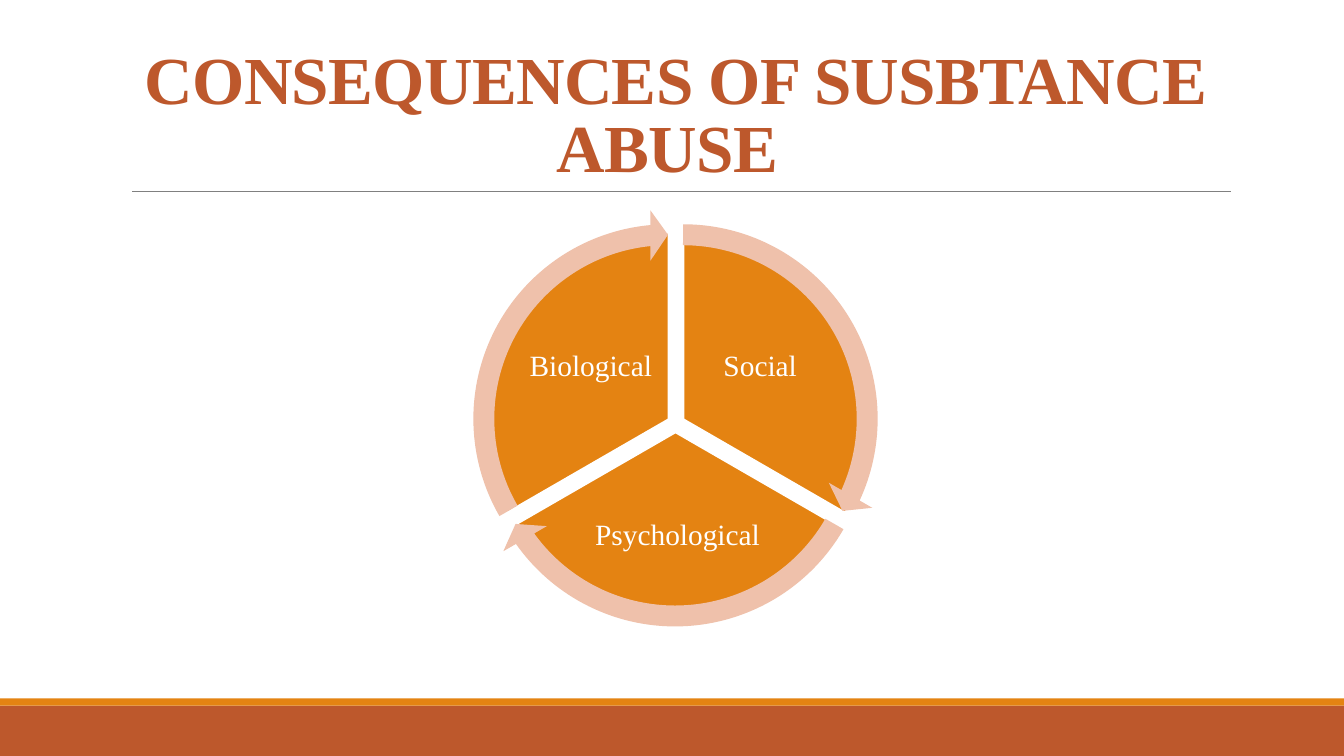
from pptx import Presentation
from pptx.util import Inches, Pt
from pptx.dml.color import RGBColor
from pptx.enum.shapes import MSO_CONNECTOR, MSO_SHAPE
from pptx.enum.text import MSO_ANCHOR, PP_ALIGN
from pptx.oxml.ns import qn
from lxml import etree

COLORS = {
    "rust": "BD582C",
    "orange": "E48312",
    "peach": "EFC1AB",
    "gray": "808080",
    "white": "FFFFFF",
}
FONT = "Times New Roman"

deck = Presentation()
deck.slide_width = Inches(13.33)
deck.slide_height = Inches(7.5)
slide = deck.slides.add_slide(deck.slide_layouts[6])


def add_form(kind, box, fill, angles=(), edge=None):
    form = slide.shapes.add_shape(kind, *map(Inches, box))
    form.shadow.inherit = False
    form.fill.solid()
    form.fill.fore_color.rgb = RGBColor.from_string(COLORS[fill])
    for i, angle in enumerate(angles):
        form.adjustments[i] = angle
    if edge:
        form.line.color.rgb = RGBColor.from_string(COLORS[edge])
        form.line.width = Pt(1.25)
    else:
        form.line.fill.background()


def add_label(text, box, size, color, anchor, inset, spacing):
    frame = slide.shapes.add_textbox(*map(Inches, box)).text_frame
    frame.word_wrap = True
    frame.vertical_anchor = anchor
    frame.margin_left = frame.margin_right = Inches(inset[0])
    frame.margin_top = frame.margin_bottom = Inches(inset[1])
    para = frame.paragraphs[0]
    para.text = text
    para.alignment = PP_ALIGN.CENTER
    para.line_spacing = spacing
    para.font.name = FONT
    para.font.size = Pt(size)
    para.font.color.rgb = RGBColor.from_string(COLORS[color])
    return para


add_form(MSO_SHAPE.RECTANGLE, (0, 7, 13.33, 0.5), "rust")
add_form(MSO_SHAPE.RECTANGLE, (0, 6.93, 13.33, 0.07), "orange")

rule = slide.shapes.add_connector(
    MSO_CONNECTOR.STRAIGHT, Inches(1.31), Inches(1.9), Inches(12.21), Inches(1.9)
)
rule.line.color.rgb = RGBColor.from_string(COLORS["gray"])
rule.line.width = Pt(0.5)
etree.SubElement(rule._element.spPr, qn("a:effectLst"))

title = add_label(
    "CONSEQUENCES OF SUSBTANCE ABUSE ", (1.2, 0.31, 11, 1.59),
    48, "rust", MSO_ANCHOR.BOTTOM, (0.1, 0.05), 0.85,
)
title.font.bold = True
title.runs[0]._r.get_or_add_rPr().set("spc", "-50")

PIE = 3.7
RING = 4.15
parts = [
    ("Social", (6.88, 3.09, 1.32, 1.1), (4.93, 2.31), (162, 18), (14.73, 161.99)),
    ("Psychological", (5.73, 4.83, 1.98, 0.97), (4.85, 2.44), (18, 90), (86.72, 18.01)),
    ("Biological ", (5.2, 3.09, 1.32, 1.1), (4.78, 2.31), (90, 162), (158.73, 90)),
]
for name, box, spot, span, turn in parts:
    add_form(MSO_SHAPE.PIE, (*spot, PIE, PIE), "orange", span, "white")
    add_label(name, box, 21, "white", MSO_ANCHOR.MIDDLE, (0.03, 0.03), 0.9)

for name, box, (left, top), span, (end, start) in parts:
    ring = (left - 0.23, top - 0.23, RING, RING)
    add_form(MSO_SHAPE.CIRCULAR_ARROW, ring, "peach", (0.05, 3.28, end, start, 0.06))

deck.save("out.pptx")
